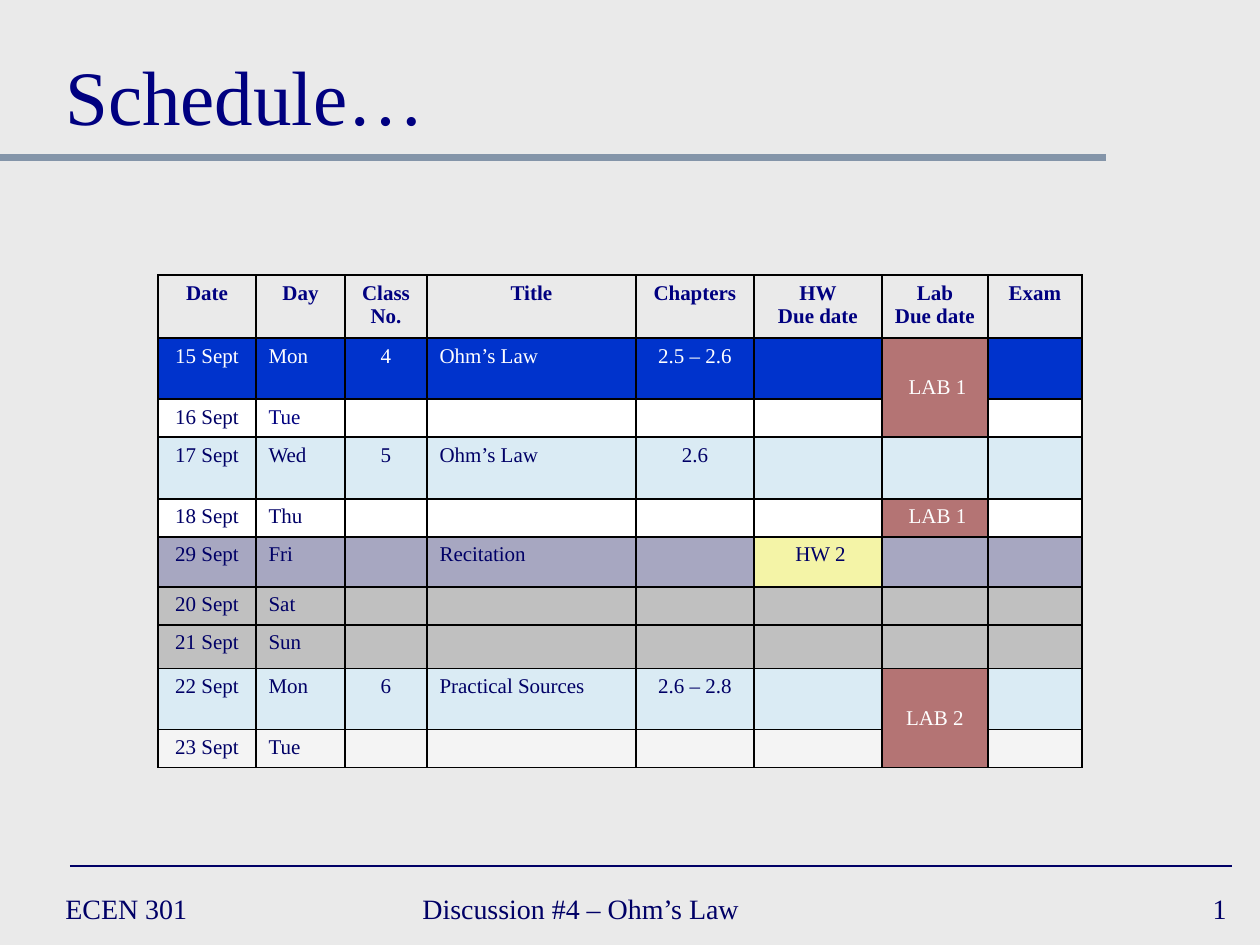
from lxml.etree import SubElement
from pptx import Presentation
from pptx.dml.color import RGBColor
from pptx.enum.shapes import MSO_CONNECTOR as Connector
from pptx.enum.text import MSO_ANCHOR as Anchor, PP_ALIGN as Align
from pptx.oxml.ns import qn
from pptx.util import Emu, Pt

EMU_PER_PX = 914400 / 126
FONT = "Times New Roman"
NAVY, INK, WHITE, BLACK = "000080", "000066", "FFFFFF", "000000"

# Fills: colour and opacity in percent
CLASS_TODAY = ("0033CC", 100)
CLASS_DAY = ("CCECFF", 50)
FREE_DAY = (WHITE, 100)
LAST_DAY = (WHITE, 50)
RECITATION = ("666699", 50)
WEEKEND = ("C0C0C0", 100)
LAB = ("800000", 50)
HOMEWORK = ("FFFF66", 50)

COLUMN_WIDTHS = [98, 89, 82, 209, 118, 128, 106, 94]
LEFT_COLUMNS = (1, 3)
HW_COLUMN, LAB_COLUMN = 5, 6
HEADERS = ["Date", "Day", "Class\nNo.", "Title", "Chapters",
           "HW\nDue date", "Lab\nDue date", "Exam"]
HEADER_HEIGHT = 61
HEADER_MARGIN = 10

# Height, fill, then date, day, class number, title and chapters
DAYS = [
    (61, CLASS_TODAY, ["15 Sept", "Mon", "4", "Ohm’s Law", "2.5 – 2.6"]),
    (38, FREE_DAY, ["16 Sept", "Tue"]),
    (62, CLASS_DAY, ["17 Sept", "Wed", "5", "Ohm’s Law", "2.6"]),
    (37, FREE_DAY, ["18 Sept", "Thu"]),
    (50, RECITATION, ["29 Sept", "Fri", "", "Recitation"]),
    (38, WEEKEND, ["20 Sept", "Sat"]),
    (44, WEEKEND, ["21 Sept", "Sun"]),
    (61, CLASS_DAY, ["22 Sept", "Mon", "6", "Practical Sources", "2.6 – 2.8"]),
    (38, LAST_DAY, ["23 Sept", "Tue"]),
]

# Row, column, rows spanned, text, fill, text colour
DUE_DATES = [
    (1, LAB_COLUMN, 2, " LAB 1", LAB, WHITE),
    (4, LAB_COLUMN, 1, " LAB 1", LAB, WHITE),
    (5, HW_COLUMN, 1, " HW 2", HOMEWORK, INK),
    (8, LAB_COLUMN, 2, "LAB 2", LAB, WHITE),
]


def px(length):
    return Emu(round(length * EMU_PER_PX))


def rgb(value):
    return RGBColor.from_string(value)


def write_text(frame, text, size, color, align=Align.LEFT, bold=False):
    font_values = {"name": FONT, "size": Pt(size), "bold": bold}
    for index, line in enumerate(text.split("\n")):
        paragraph = frame.add_paragraph() if index else frame.paragraphs[0]
        paragraph.alignment = align
        if not line:
            # An empty cell keeps the small text size so its row stays low
            SubElement(paragraph._p, qn("a:endParaRPr"), sz=str(size * 100))
            continue
        run = paragraph.add_run()
        run.text = line
        for name, value in font_values.items():
            setattr(run.font, name, value)
        run.font.color.rgb = rgb(color)


def add_label(slide, box, text, size, color, anchor=Anchor.MIDDLE, align=Align.LEFT):
    frame = slide.shapes.add_textbox(*map(px, box)).text_frame
    frame.word_wrap = True
    frame.vertical_anchor = anchor
    write_text(frame, text, size, color, align)


def add_rule(slide, left, right, y, color, width):
    rule = slide.shapes.add_connector(
        Connector.STRAIGHT, px(left), px(y), px(right), px(y))
    rule.line.color.rgb = rgb(color)
    rule.line.width = Pt(width)
    SubElement(rule._element.spPr, qn("a:effectLst"))


def add_borders(cell):
    properties = cell._tc.get_or_add_tcPr()
    for side in ("lnL", "lnR", "lnT", "lnB"):
        line = SubElement(properties, qn(f"a:{side}"), w=str(Pt(1)))
        fill = SubElement(line, qn("a:solidFill"))
        SubElement(fill, qn("a:srgbClr"), val=BLACK)


def fill_cell(cell, color, opacity):
    cell.fill.solid()
    cell.fill.fore_color.rgb = rgb(color)
    if opacity < 100:
        color_element = cell._tc.tcPr.find(qn("a:solidFill"))[0]
        SubElement(color_element, qn("a:alpha"), val=str(opacity * 1000))


def add_schedule(slide, left, top):
    heights = [HEADER_HEIGHT] + [height for height, _, _ in DAYS]
    table = slide.shapes.add_table(
        len(heights), len(COLUMN_WIDTHS), px(left), px(top),
        px(sum(COLUMN_WIDTHS)), px(sum(heights))).table
    table.first_row = table.horz_banding = False
    for column, width in zip(table.columns, COLUMN_WIDTHS):
        column.width = px(width)
    for row, height in zip(table.rows, heights):
        row.height = px(height)
    for cell in table.iter_cells():
        add_borders(cell)

    # Header row
    for column, text in enumerate(HEADERS):
        cell = table.cell(0, column)
        cell.fill.background()
        cell.margin_left = cell.margin_right = px(HEADER_MARGIN)
        write_text(cell.text_frame, text, 12, NAVY, Align.CENTER, bold=True)

    # Due dates, some of them over two days
    due_cells = set()
    for row, column, span, text, fill, color in DUE_DATES:
        cell = table.cell(row, column)
        if span > 1:
            cell.merge(table.cell(row + span - 1, column))
            cell.vertical_anchor = Anchor.MIDDLE
        fill_cell(cell, *fill)
        write_text(cell.text_frame, text, 12, color, Align.CENTER)
        due_cells.update((row + step, column) for step in range(span))

    # Days
    for row, (_, fill, texts) in enumerate(DAYS, start=1):
        day_color = WHITE if fill == CLASS_TODAY else INK
        for column in range(len(COLUMN_WIDTHS)):
            if (row, column) in due_cells:
                continue
            cell = table.cell(row, column)
            fill_cell(cell, *fill)
            text = texts[column] if column < len(texts) else ""
            align = Align.LEFT if column in LEFT_COLUMNS else Align.CENTER
            color = NAVY if (row, column) == (2, 1) else day_color
            write_text(cell.text_frame, text, 12, color, align)


def main():
    presentation = Presentation()
    presentation.slide_width, presentation.slide_height = px(1260), px(945)
    slide = presentation.slides.add_slide(presentation.slide_layouts[6])
    slide.background.fill.solid()
    slide.background.fill.fore_color.rgb = rgb("EAEAEA")

    # Rules under the title and above the footer
    add_rule(slide, 0, 1106, 158, "8495A9", 4)
    add_rule(slide, 70, 1232, 866, INK, 1)

    # Footer
    add_label(slide, (53, 882, 273, 53), "ECEN 301", 16, INK)
    add_label(slide, (410, 882, 482, 53), "Discussion #4 – Ohm’s Law", 16, INK)
    add_label(slide, (977, 882, 262, 53), "1", 16, INK, align=Align.RIGHT)

    add_schedule(slide, 158, 275)
    add_label(slide, (53, 21, 1166, 126), "Schedule…", 44, NAVY, Anchor.BOTTOM)

    presentation.save("out.pptx")


if __name__ == "__main__":
    main()
